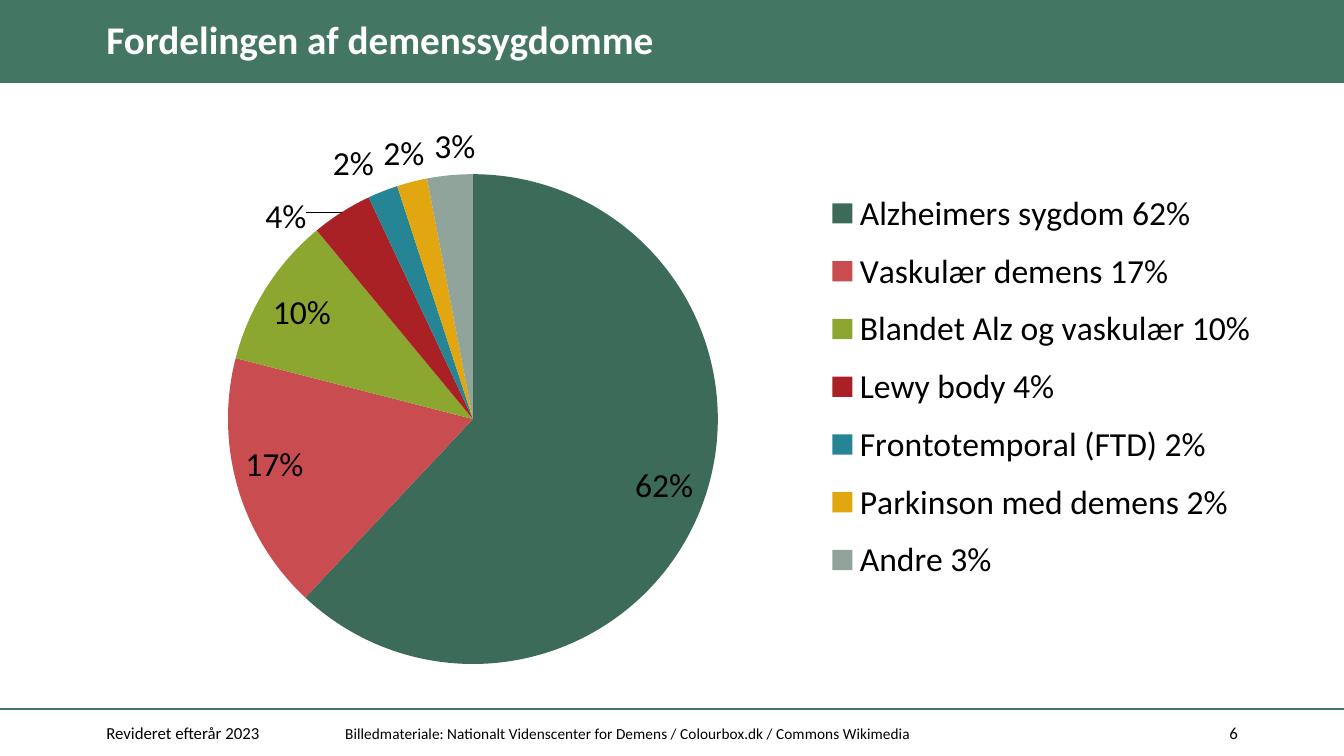
from lxml import etree
from pptx import Presentation
from pptx import util as u
from pptx.chart.data import CategoryChartData
from pptx.dml.color import RGBColor
from pptx.enum import chart as charts, shapes, text
from pptx.oxml.ns import qn

SCALE = 9144000 / 1344  # EMU in one px
WIDTH, HEIGHT = 1344, 756
FONT = "Calibri"
COLORS = {"green": "437763", "white": "FFFFFF", "black": "000000"}
SLICES = [  # name, share, colour, label shift in px
    ("Alzheimers sygdom", 0.62, "3C6B59", None),
    ("Vaskulær demens", 0.17, "C94C51", None),
    ("Blandet Alz og vaskulær", 0.10, "8CA730", None),
    ("Lewy body", 0.04, "A92025", (-31, 31)),
    ("Frontotemporal (FTD)", 0.02, "258594", (-6, 0)),
    ("Parkinson med demens", 0.02, "E2A610", (14, 0)),
    ("Andre", 0.03, "91A49B", (26, 0)),
]


def px(length):
    return u.Emu(round(length * SCALE))


def box_emu(box):
    return [px(length) for length in box]


def rgb(name):
    return RGBColor.from_string(COLORS[name])


def format_font(font, size, color, bold=False):
    font.name, font.size, font.bold = FONT, u.Pt(size), bold
    font.color.rgb = rgb(color)


def set_layout(parent, index, **values):
    """Give a chart part a manual layout, in fractions of the chart."""
    for old in parent.findall(qn("c:layout")):
        parent.remove(old)
    layout = etree.Element(qn("c:layout"))
    parent.insert(index, layout)
    manual = etree.SubElement(layout, qn("c:manualLayout"))
    for name, value in values.items():
        etree.SubElement(manual, qn(f"c:{name}")).set("val", str(value))


def add_header(slide, box):
    left, top, width, height = box
    band = slide.shapes.add_shape(shapes.MSO_SHAPE.RECTANGLE, *box_emu(box))
    band.shadow.inherit = False
    band.fill.solid()
    band.fill.fore_color.rgb = rgb("green")
    band.line.fill.background()
    slide.shapes._spTree.insert(2, band._element)  # behind the title

    title = slide.shapes.title
    title.left, title.top, title.width, title.height = box_emu(
        (left + 93, top + 12, 1000, height - 24))
    frame = title.text_frame
    frame.text = "Fordelingen af demenssygdomme"
    frame.vertical_anchor = text.MSO_ANCHOR.MIDDLE
    frame.auto_size = text.MSO_AUTO_SIZE.NONE
    frame.margin_left = u.Inches(0.1)
    frame.margin_top = frame.margin_right = frame.margin_bottom = 0
    paragraph = frame.paragraphs[0]
    paragraph.alignment = text.PP_ALIGN.LEFT
    paragraph.line_spacing = 0.9
    format_font(paragraph.runs[0].font, 21, "white", bold=True)


def add_pie(slide, box):
    data = CategoryChartData(number_format="0%")
    data.categories = [f"{name} {share:.0%}" for name, share, *_ in SLICES]
    data.add_series("Series 1", [share for _, share, *_ in SLICES])
    chart = slide.shapes.add_chart(
        charts.XL_CHART_TYPE.PIE, *box_emu(box), data).chart
    chart.has_title = False
    format_font(chart.font, 18, "black")

    chart.has_legend = True
    chart.legend.position = charts.XL_LEGEND_POSITION.RIGHT
    chart.legend.include_in_layout = False
    format_font(chart.legend.font, 18, "black")
    set_layout(chart.legend._element, 1, xMode="edge", yMode="edge",
               x=0.61, y=0.14, w=0.37, h=0.72)
    plot = chart.plots[0]
    plot.vary_by_categories = True
    set_layout(plot._element.getparent(), 0, layoutTarget="inner",
               xMode="edge", yMode="edge", x=0.052, y=0.137, w=0.533, h=0.836)

    series = plot.series[0]
    labels = series.data_labels
    labels.show_value = True
    labels.number_format, labels.number_format_is_linked = "0%", False
    format_font(labels.font, 18, "black")
    for index, (_, share, color, _) in enumerate(SLICES):
        point = series.points[index]
        point.format.fill.solid()
        point.format.fill.fore_color.rgb = RGBColor.from_string(color)
        label = point.data_label
        format_font(label.font, 18, "black")
        label.position = (charts.XL_LABEL_POSITION.INSIDE_END if share >= 0.1
                          else charts.XL_LABEL_POSITION.OUTSIDE_END)

    # Spread the crowded labels of the small slices
    label_elements = labels._element.findall(qn("c:dLbl"))
    for element, (*_, shift) in zip(label_elements, SLICES):
        if shift:
            set_layout(element, 1, x=round(shift[0] / box[2], 3),
                       y=round(shift[1] / box[3], 3))


def add_footer(slide, box):
    left, top, width, height = box
    rule = slide.shapes.add_connector(
        shapes.MSO_CONNECTOR.STRAIGHT,
        *box_emu((left, top, left + width, top)))
    rule.line.color.rgb = rgb("green")
    rule.line.width = u.Pt(1)
    etree.SubElement(rule._element.spPr, qn("a:effectLst"))

    credit = ("Billedmateriale: Nationalt Videnscenter for Demens / "
              "Colourbox.dk / Commons Wikimedia")
    for x, text_width, words, size, alignment in [
        (93, 226, "Revideret efterår 2023", 9, text.PP_ALIGN.LEFT),
        (332, 847, credit, 8.25, text.PP_ALIGN.LEFT),
        (1189, 62, "6", 9, text.PP_ALIGN.RIGHT),
    ]:
        frame = slide.shapes.add_textbox(
            *box_emu((left + x, top + 4, text_width, height - 7))).text_frame
        frame.word_wrap = True
        frame.vertical_anchor = text.MSO_ANCHOR.MIDDLE
        frame.text = words
        paragraph = frame.paragraphs[0]
        paragraph.alignment = alignment
        format_font(paragraph.runs[0].font, size, "black")


def main():
    presentation = Presentation()
    presentation.slide_width, presentation.slide_height = px(WIDTH), px(HEIGHT)
    slide = presentation.slides.add_slide(presentation.slide_layouts[5])
    add_header(slide, (0, 0, WIDTH, 83))
    add_pie(slide, (93, 94, 1193, 586))
    add_footer(slide, (0, 709, WIDTH, HEIGHT - 709))
    presentation.save("out.pptx")


if __name__ == "__main__":
    main()
